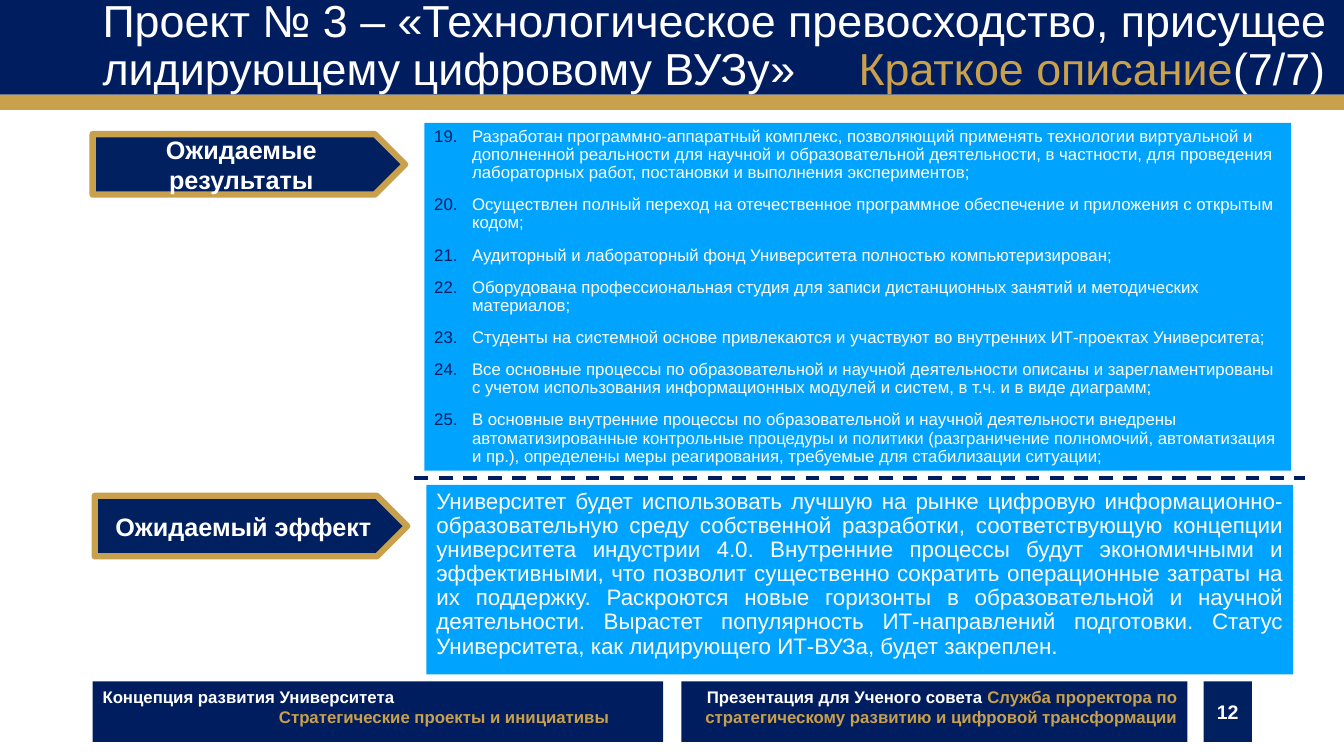
from dataclasses import dataclass
from typing import Optional

from lxml.etree import SubElement
from pptx import Presentation
from pptx.dml.color import RGBColor
from pptx.enum.dml import MSO_LINE
from pptx.enum.shapes import MSO_CONNECTOR, MSO_SHAPE as Geometry
from pptx.enum.text import MSO_ANCHOR as Anchor, PP_ALIGN as Align
from pptx.oxml.ns import qn
from pptx.slide import Slide
from pptx.util import Pt

COLORS = {
    "navy": "001E5F",
    "midnight": "002060",
    "gold": "C9A04B",
    "sky": "00A3FE",
    "white": "FFFFFF",
}
FONT = "Arial"
FIRST_RESULT = 19


@dataclass
class Paragraph:
    """Coloured text pieces sharing one paragraph layout."""
    pieces: list[tuple[str, str]]
    align: Align = Align.LEFT
    line_spacing: float = 1.0
    space_before: float = 0
    indent: float = 0
    tab: float = 0
    number_from: int = 0


@dataclass
class Block:
    """A box on the slide with its text."""
    left: float
    top: float
    width: float
    height: float
    fill: Optional[str] = None
    paragraphs: tuple[Paragraph, ...] = ()
    size: float = 12
    bold: bool = False
    anchor: Anchor = Anchor.MIDDLE
    geometry: Geometry = Geometry.RECTANGLE
    outline: Optional[str] = None


RESULTS = (
    "Разработан программно-аппаратный комплекс, позволяющий применять технологии виртуальной и "
    "дополненной реальности для научной и образовательной деятельности, в частности, для проведения "
    "лабораторных работ, постановки и выполнения экспериментов;",
    "Осуществлен полный переход на отечественное программное обеспечение и приложения с открытым кодом;",
    "Аудиторный и лабораторный фонд Университета полностью компьютеризирован;",
    "Оборудована профессиональная студия для записи дистанционных занятий и методических материалов;",
    "Студенты на системной основе привлекаются и участвуют во внутренних ИТ-проектах Университета;",
    "Все основные процессы по образовательной и научной деятельности описаны и зарегламентированы "
    "с учетом использования информационных модулей и систем, в т.ч. и в виде диаграмм;",
    "В основные внутренние процессы по образовательной и научной деятельности внедрены "
    "автоматизированные контрольные процедуры и политики (разграничение полномочий, автоматизация "
    "и пр.), определены меры реагирования, требуемые для стабилизации ситуации;",
)
EFFECT = (
    "Университет будет использовать лучшую на рынке цифровую информационно-образовательную среду "
    "собственной разработки, соответствующую концепции университета индустрии 4.0. Внутренние "
    "процессы будут экономичными и эффективными, что позволит существенно сократить операционные "
    "затраты на их поддержку. Раскроются новые горизонты в образовательной и научной деятельности. "
    "Вырастет популярность ИТ-направлений подготовки. Статус Университета, как лидирующего ИТ-ВУЗа, "
    "будет закреплен."
)


def rgb(name: str) -> RGBColor:
    """Look up a colour by name."""
    return RGBColor.from_string(COLORS[name])


def heading(left: float, top: float, text: str) -> Block:
    """Describe a gold-edged section pointer."""
    label = Paragraph([(text, "white")], Align.CENTER)
    return Block(left, top, 223.2, 43.2, "midnight", (label,), 18, True,
                 geometry=Geometry.PENTAGON, outline="gold")


def footer(left: float, width: float, fill: str, *paragraphs: Paragraph,
           size: float = 12, anchor: Anchor = Anchor.TOP) -> Block:
    """Describe one box of the footer row."""
    return Block(left, 486.7, width, 43.2, fill, paragraphs, size, True, anchor)


def blocks() -> list[Block]:
    """List every box from back to front."""
    title = Paragraph([
        ("Проект № 3 – «Технологическое превосходство, присущее лидирующему цифровому ВУЗу»\t", "white"),
        ("Краткое описание", "gold"),
        ("(7/7)", "white"),
    ], line_spacing=0.9, tab=540)
    results = tuple(
        Paragraph([(result, "white")], line_spacing=0.9, space_before=10, indent=27,
                  number_from=FIRST_RESULT)
        for result in RESULTS
    )
    effect = Paragraph([(EFFECT, "white")], Align.JUSTIFY, 0.9)
    audience = Paragraph([
        ("Презентация для Ученого совета ", "white"),
        ("Служба проректора по стратегическому развитию и цифровой трансформации", "gold"),
    ], Align.RIGHT)
    concept = Paragraph([("Концепция развития Университета", "white")])
    initiatives = Paragraph([("Стратегические проекты и инициативы", "gold")], indent=126)
    page = Paragraph([("12", "white")], Align.CENTER)
    return [
        Block(0, 0, 960, 67.7, "navy"),
        Block(0, 67.7, 960, 10.8, "gold"),
        heading(66.2, 95.8, "Ожидаемые результаты"),
        footer(859.7, 34.5, "midnight", page, size=14, anchor=Anchor.MIDDLE),
        Block(66.2, 0, 894, 67, None, (title,), 32),
        footer(486.7, 361.4, "navy", audience),
        footer(66.2, 407.5, "navy", concept, initiatives),
        Block(303.1, 87.8, 619.2, 248.4, "sky", results, 12, anchor=Anchor.TOP),
        heading(67.7, 354.2, "Ожидаемый эффект"),
        Block(304.6, 346.3, 619.2, 135.4, "sky", (effect,), 16, anchor=Anchor.TOP),
    ]


def write_paragraph(paragraph, content: Paragraph, block: Block) -> None:
    """Fill one paragraph and format its runs."""
    paragraph.alignment = content.align
    paragraph.line_spacing = content.line_spacing
    paragraph.space_before = Pt(content.space_before)
    for text, color in content.pieces:
        run = paragraph.add_run()
        run.text = text
        run.font.name = FONT
        run.font.size = Pt(block.size)
        run.font.bold = block.bold
        run.font.color.rgb = rgb(color)
    layout = paragraph._p.get_or_add_pPr()
    if content.indent:
        layout.set("marL", str(Pt(content.indent)))
    if content.number_from:
        layout.set("indent", str(-Pt(content.indent)))
        number_color = SubElement(layout, qn("a:buClr"))
        SubElement(number_color, qn("a:srgbClr"), val=COLORS["navy"])
        SubElement(layout, qn("a:buAutoNum"), type="arabicPeriod", startAt=str(content.number_from))
    if content.tab:
        tabs = SubElement(layout, qn("a:tabLst"))
        SubElement(tabs, qn("a:tab"), pos=str(Pt(content.tab)), algn="l")


def draw_block(slide: Slide, block: Block) -> None:
    """Draw one box with its text."""
    frame = [Pt(length) for length in (block.left, block.top, block.width, block.height)]
    if block.fill:
        box = slide.shapes.add_shape(block.geometry, *frame)
        box.shadow.inherit = False
        box.fill.solid()
        box.fill.fore_color.rgb = rgb(block.fill)
        if block.outline:
            box.line.color.rgb = rgb(block.outline)
            box.line.width = Pt(4.5)
        else:
            box.line.fill.background()
    else:
        box = slide.shapes.add_textbox(*frame)
    body = box.text_frame
    body.word_wrap = True
    body.vertical_anchor = block.anchor
    for index, content in enumerate(block.paragraphs):
        paragraph = body.add_paragraph() if index else body.paragraphs[0]
        write_paragraph(paragraph, content, block)


def draw_divider(slide: Slide) -> None:
    """Draw the dashed line between the two sections."""
    divider = slide.shapes.add_connector(
        MSO_CONNECTOR.STRAIGHT, Pt(296), Pt(341.3), Pt(932.4), Pt(341.3))
    divider.line.color.rgb = rgb("navy")
    divider.line.width = Pt(2.5)
    divider.line.dash_style = MSO_LINE.DASH
    SubElement(divider._element.spPr, qn("a:effectLst"))


def main() -> None:
    """Build and save the slide."""
    deck = Presentation()
    deck.slide_width, deck.slide_height = Pt(960), Pt(540)
    slide = deck.slides.add_slide(deck.slide_layouts[6])
    for block in blocks():
        draw_block(slide, block)
    draw_divider(slide)
    deck.save("out.pptx")


if __name__ == "__main__":
    main()
